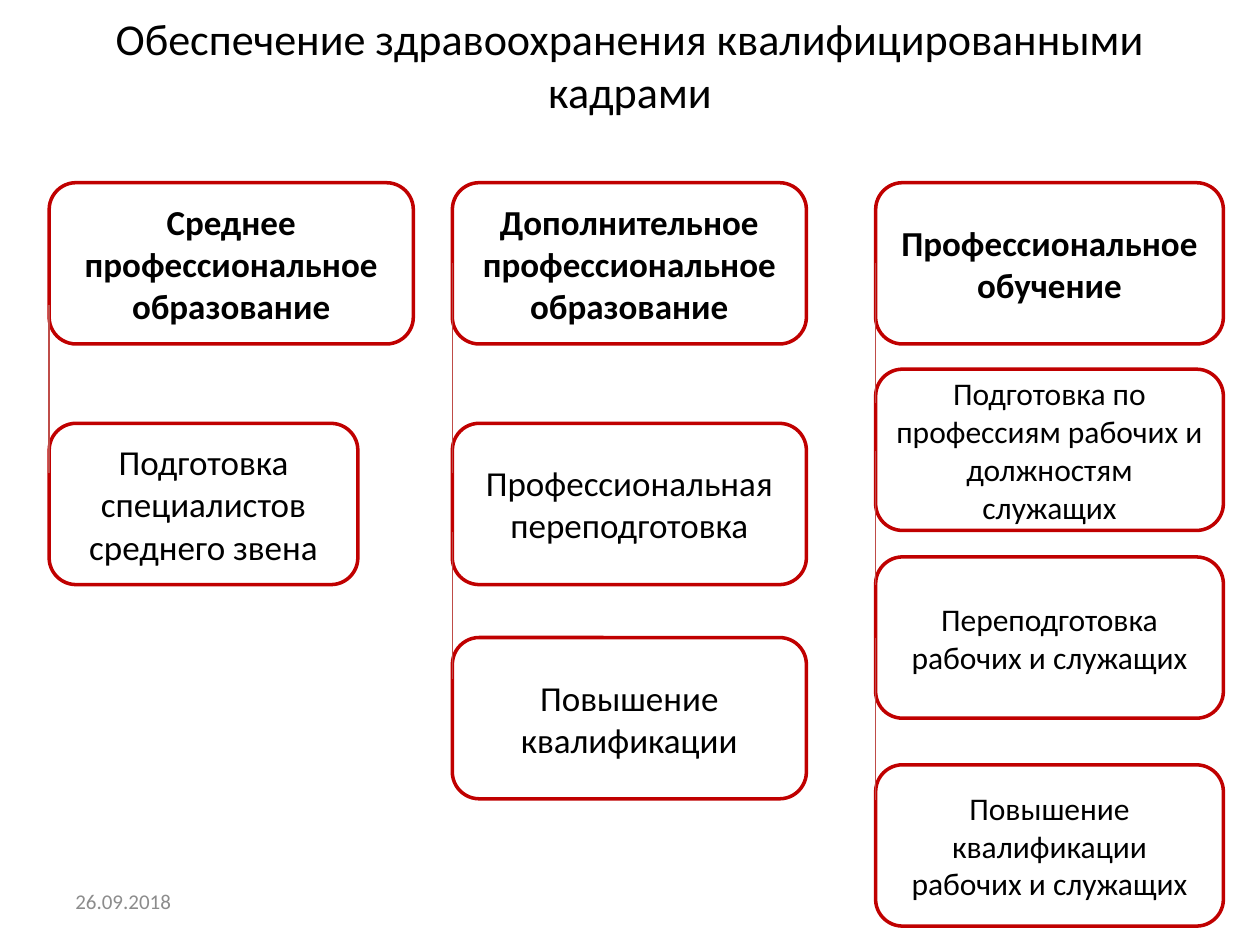
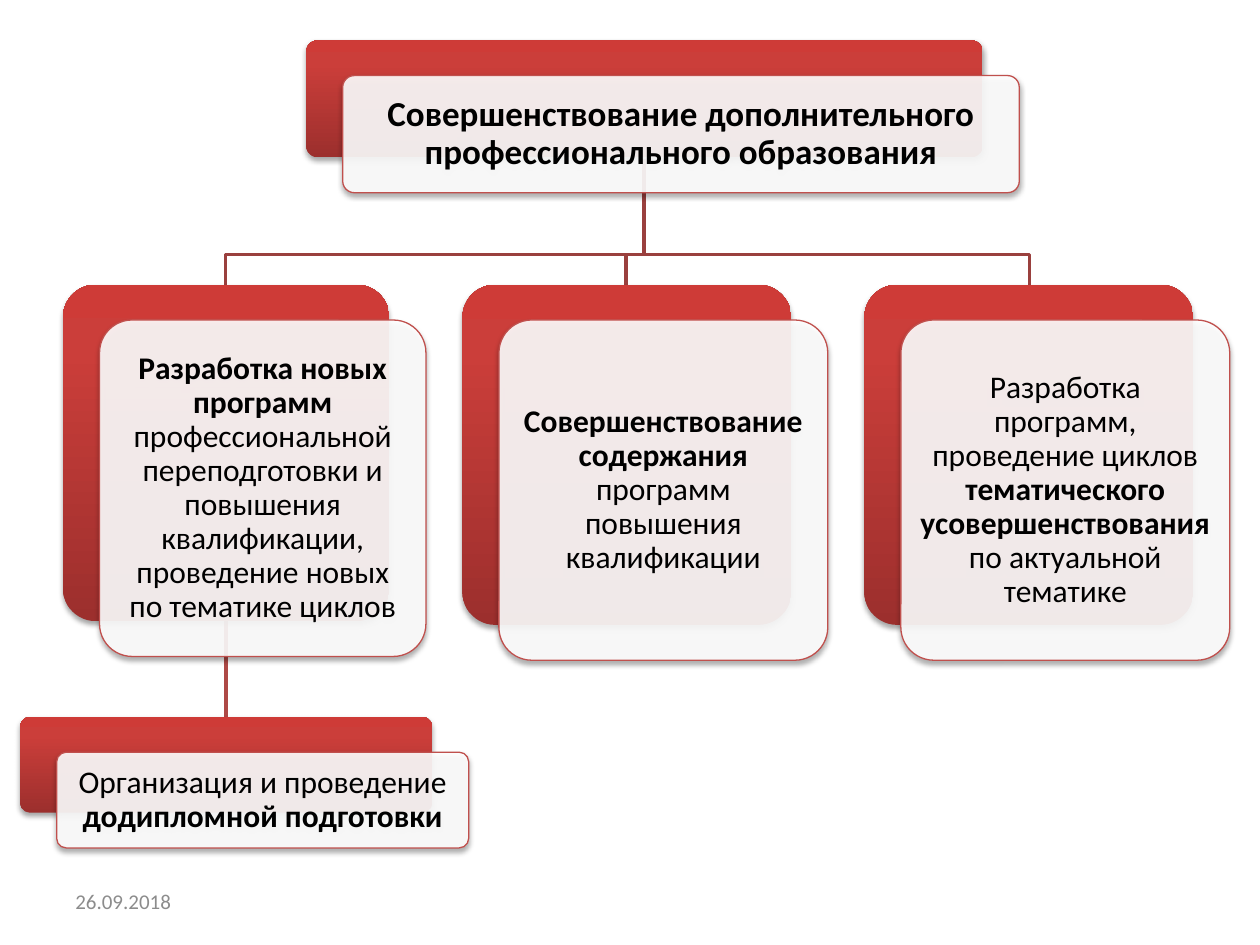
"""Two slides on staffing health care: training routes and further education."""
from dataclasses import dataclass

from lxml.etree import SubElement
from pptx import Presentation
from pptx.dml.color import RGBColor as Rgb
from pptx.enum.shapes import MSO_CONNECTOR as Link, MSO_SHAPE as Shape
from pptx.enum.text import MSO_ANCHOR as Anchor, PP_ALIGN as Align
from pptx.oxml.ns import qn
from pptx.util import Inches, Pt


@dataclass(frozen=True)
class Theme:
    font: str = "Calibri"
    ink: str = "000000"
    muted: str = "8C8C8C"
    paper: str = "FFFFFF"
    frame: str = "C00000"
    rail: str = "BF4C48"
    trunk: str = "9A403E"
    branch: str = "AE4946"
    card_edge: str = "C0504D"
    gradient: tuple = ((0, "9C2F2D"), (80, "CB3E3A"), (100, "CE3B37"))
    title: float = 25.2
    large: float = 20
    body: float = 18
    small: float = 12


theme = Theme()


def write(box, spans, size, color=theme.ink, align=Align.CENTER, spacing=1.0, inset=None):
    frame = box.text_frame
    frame.word_wrap = True
    frame.vertical_anchor = Anchor.MIDDLE
    if inset is not None:
        frame.margin_left = frame.margin_right = Inches(inset)
        frame.margin_top = frame.margin_bottom = Inches(inset)
    para = frame.paragraphs[0]
    para.alignment = align
    para.line_spacing = spacing
    for words, bold in spans:
        span = para.add_run()
        span.text = words
        span.font.bold = bold
    para.font.name = theme.font
    para.font.size = Pt(size)
    para.font.color.rgb = Rgb.from_string(color)


def add_rounded(page, left, top, width, height, edge=None, weight=2.0):
    box = page.shapes.add_shape(Shape.ROUNDED_RECTANGLE, *map(Inches, (left, top, width, height)))
    box.shadow.inherit = False
    box.fill.solid()
    box.fill.fore_color.rgb = Rgb.from_string(theme.paper)
    if edge:
        box.line.color.rgb = Rgb.from_string(edge)
        box.line.width = Pt(weight)
    else:
        box.line.fill.background()
    return box


deck = Presentation()
deck.slide_width, deck.slide_height = Inches(10), Inches(7.5)
routes_page, improve_page = [deck.slides.add_slide(deck.slide_layouts[6]) for _ in range(2)]

for page in (routes_page, improve_page):
    date = page.shapes.add_textbox(*map(Inches, (0.5, 6.95, 2.33, 0.4)))
    write(date, [("26.09.2018", False)], theme.small, theme.muted, Align.LEFT)

title = routes_page.shapes.add_textbox(*map(Inches, (0.5, 0.3, 9, 0.42)))
write(title, [("Обеспечение здравоохранения квалифицированными кадрами", False)], theme.title)

head_top, box_height = 1.45, 1.28
routes = [
    (0.39, 2.89, "Среднее профессиональное образование", theme.large,
     [(3.36, 2.45, "Подготовка специалистов среднего звена")], [(2.42, 3.75)]),
    (3.59, 2.81, "Дополнительное профессиональное образование", theme.large,
     [(3.36, 2.81, "Профессиональная переподготовка"),
      (5.06, 2.81, "Повышение квалификации")], [(2.09, 3.75), (4.22, 5.39)]),
    (6.95, 2.76, "Профессиональное обучение", theme.body,
     [(2.93, 2.76, "Подготовка по профессиям рабочих и должностям служащих"),
      (4.42, 2.76, "Переподготовка рабочих и служащих"),
      (6.07, 2.76, "Повышение квалификации рабочих и служащих")],
     [(2.09, 3.2), (3.58, 4.64), (5.06, 6.35)]),
]
for left, width, heading, size, steps, rails in routes:
    head = add_rounded(routes_page, left, head_top, width, box_height, theme.frame)
    write(head, [(heading, True)], theme.large)
    for top, step_width, words in steps:
        step = add_rounded(routes_page, left, top, step_width, box_height, theme.frame)
        write(step, [(words, False)], size)
    for start, end in rails:
        rail = routes_page.shapes.add_connector(
            Link.STRAIGHT, *map(Inches, (left, start, left, end)))
        rail.line.color.rgb = Rgb.from_string(theme.rail)
        rail.line.width = Pt(0.75)
        SubElement(rail.element.spPr, qn("a:effectLst"))

root_x, root_bottom, bus_y, row_top = 5.11, 1.26, 2.02, 2.26
for child_x in (1.79, 4.97, 8.17):
    turns = [(root_x, bus_y), (child_x, bus_y), (child_x, row_top)]
    builder = improve_page.shapes.build_freeform(Inches(root_x), Inches(root_bottom))
    builder.add_line_segments([(Inches(x), Inches(y)) for x, y in turns], close=False)
    trunk = builder.convert_to_shape()
    trunk.shadow.inherit = False
    trunk.fill.background()
    trunk.line.color.rgb = Rgb.from_string(theme.trunk)
    trunk.line.width = Pt(2)

shift_x, shift_y = 0.29, 0.28
cards = [
    (2.43, 0.32, 5.37, 0.93, theme.large, 0.08,
     [("Совершенствование дополнительного профессионального образования", True)]),
    (0.5, row_top, 2.59, 2.67, theme.body, 0.07,
     [("Разработка новых программ ", True),
      ("профессиональной переподготовки и повышения квалификации, "
       "проведение новых по тематике циклов", False)]),
    (3.67, row_top, 2.61, 2.7, theme.body, 0.07,
     [("Совершенствование содержания ", True),
      ("программ повышения квалификации", False)]),
    (6.86, row_top, 2.61, 2.7, theme.body, 0.07,
     [("Разработка программ, проведение циклов ", False),
      ("тематического усовершенствования ", True),
      ("по актуальной тематике", False)]),
    (0.16, 5.69, 3.27, 0.76, theme.body, 0.07,
     [("Организация и проведение ", False), ("додипломной подготовки", True)]),
]
backs = []
for left, top, width, height, size, inset, spans in cards:
    back = add_rounded(improve_page, left, top, width, height)
    back.fill.gradient()
    back.fill.gradient_angle = 90
    stops = back.element.spPr.find(qn("a:gradFill")).find(qn("a:gsLst"))
    for stop in list(stops):
        stops.remove(stop)
    for share, color in theme.gradient:
        stop = SubElement(stops, qn("a:gs"), pos=str(share * 1000))
        SubElement(stop, qn("a:srgbClr"), val=color)
    backs.append(back)

    front = add_rounded(improve_page, left + shift_x, top + shift_y, width, height,
                        theme.card_edge, 0.75)
    tint = front.element.spPr.find(qn("a:solidFill")).find(qn("a:srgbClr"))
    SubElement(tint, qn("a:alpha"), val="90000")
    write(front, spans, size, spacing=0.9, inset=inset)

    for layer in (back, front):
        layer.adjustments[0] = 0.1
        effects = layer.element.spPr.find(qn("a:effectLst"))
        shadow = SubElement(effects, qn("a:outerShdw"), blurRad=str(Pt(3.1)),
                            dist=str(Pt(1.8)), dir="5400000", rotWithShape="0")
        shade = SubElement(shadow, qn("a:srgbClr"), val=theme.ink)
        SubElement(shade, qn("a:alpha"), val="35000")

branch = improve_page.shapes.add_connector(Link.STRAIGHT, 0, 0, 0, 0)
branch.begin_connect(backs[1], 2)
branch.end_connect(backs[4], 0)
branch.line.color.rgb = Rgb.from_string(theme.branch)
branch.line.width = Pt(2)
SubElement(branch.element.spPr, qn("a:effectLst"))
branch.element.getparent().insert(2, branch.element)

deck.save("out.pptx")
